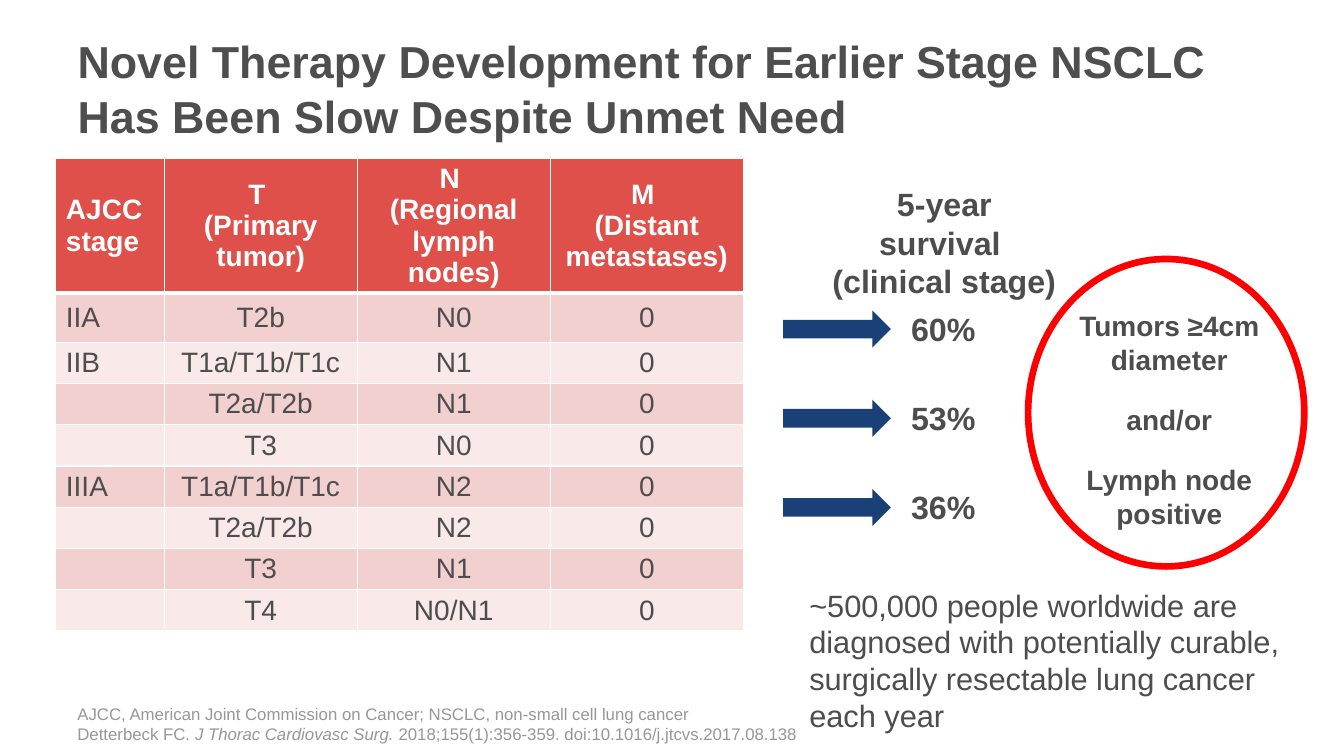
from lxml.etree import SubElement
from pptx import Presentation
from pptx.dml.color import RGBColor
from pptx.enum.shapes import MSO_SHAPE as Geo
from pptx.enum.text import MSO_ANCHOR as Anchor, PP_ALIGN as Align
from pptx.oxml.ns import qn
from pptx.util import Pt

GRAY, WHITE = "4D4D4D", "FFFFFF"
HEAD = ["AJCC stage", "T \n(Primary tumor)",
        "N \v(Regional lymph nodes)", "M \v(Distant metastases)"]
STAGES = [
    ("IIA", "T2b", "N0"),
    ("IIB", "T1a/T1b/T1c", "N1"),
    ("", "T2a/T2b", "N1"),
    ("", "T3", "N0"),
    ("IIIA", "T1a/T1b/T1c", "N2"),
    ("", "T2a/T2b", "N2"),
    ("", "T3", "N1"),
    ("", "T4", "N0/N1"),
]


def color(code):
    return RGBColor.from_string(code)


def style(para, size, code=GRAY, bold=False, align=Align.LEFT, pitch=None):
    para.alignment = align
    if pitch:
        para.line_spacing = Pt(pitch)
    font = para.font
    font.name, font.size, font.bold = "Arial", Pt(size), bold
    font.color.rgb = color(code)


def add_text(slide, box, lines, size, pitch, gap=0, **look):
    """Add a wrapped text box with one paragraph per line."""
    frame = slide.shapes.add_textbox(*map(Pt, box)).text_frame
    frame.word_wrap = True
    frame.text = "\n".join(lines)
    for i, para in enumerate(frame.paragraphs):
        style(para, size, pitch=pitch, **look)
        if i and gap:
            para.space_before = Pt(gap)
    return frame


def add_shape(slide, kind, box, fill=None, line=None, width=0):
    shape = slide.shapes.add_shape(kind, *map(Pt, box))
    shape.shadow.inherit = False
    if fill:
        shape.fill.solid()
        shape.fill.fore_color.rgb = color(fill)
    else:
        shape.fill.background()
    if line:
        shape.line.color.rgb = color(line)
        shape.line.width = Pt(width)
    else:
        shape.line.fill.background()


def set_edge(cell, side, width):
    props = cell._tc.get_or_add_tcPr()
    edge = SubElement(props, qn(f"a:ln{side}"), w=str(Pt(width)))
    fill = SubElement(edge, qn("a:solidFill"))
    SubElement(fill, qn("a:srgbClr"), val=WHITE)


def add_table(slide):
    rows = [HEAD] + [stage + ("0",) for stage in STAGES]
    high = [95.7, 35.3] + [29.5] * 7
    wide = [77.4] + [137.9] * 3
    table = slide.shapes.add_table(
        len(rows), len(wide), Pt(39.9), Pt(113.4),
        Pt(sum(wide)), Pt(sum(high))).table
    for col, width in zip(table.columns, wide):
        col.width = Pt(width)
    for r, row in enumerate(rows):
        table.rows[r].height = Pt(high[r])
        for c, text in enumerate(row):
            cell = table.cell(r, c)
            cell.text = text
            cell.vertical_anchor = Anchor.MIDDLE
            cell.margin_top = cell.margin_bottom = Pt(1.5)
            for para in cell.text_frame.paragraphs:
                style(para, 20, GRAY if r else WHITE, bold=not r,
                      align=Align.CENTER if c else Align.LEFT)
            # Borders come before the fill in the cell properties
            for side in "LRTB":
                heavy = (r, side) in ((0, "B"), (1, "T"))
                set_edge(cell, side, 3 if heavy else 1)
            cell.fill.solid()
            band = "F3D0D0" if r % 2 else "F9E9E9"
            cell.fill.fore_color.rgb = color(band if r else "DF504B")


def add_title(slide):
    title = slide.shapes.title
    title.left, title.top, title.width, title.height = map(
        Pt, (48.2, 15.8, 846, 93.6))
    frame = title.text_frame
    frame.text = ("Novel Therapy Development for Earlier Stage NSCLC "
                  "Has Been Slow Despite Unmet Need")
    frame.vertical_anchor = Anchor.MIDDLE
    style(frame.paragraphs[0], 32, "4D4E4D", bold=True, pitch=39.3)


def add_notes(slide):
    """Add the abbreviations and the citation at the foot."""
    frame = add_text(
        slide, (48.2, 500.4, 846, 34.6),
        ["AJCC, American Joint Commission on Cancer; "
         "NSCLC, non-small cell lung cancer", "Detterbeck FC. "],
        12, 14.3, code="979797")
    frame.vertical_anchor = Anchor.BOTTOM
    cite = frame.paragraphs[1]
    name = cite.add_run()
    name.text = "J Thorac Cardiovasc Surg. "
    name.font.italic = True
    cite.add_run().text = "2018;155(1):356-359. doi:10.1016/j.jtcvs.2017.08.138"


def main():
    deck = Presentation()
    deck.slide_width, deck.slide_height = Pt(960), Pt(540)
    slide = deck.slides.add_slide(deck.slide_layouts[5])
    add_title(slide)
    add_table(slide)

    # Survival by stage
    strong = dict(bold=True, align=Align.CENTER)
    frame = add_text(slide, (586.8, 128.2, 175.7, 63.4),
                     ["5-year survival ", "(clinical stage)"],
                     23, 27.5, **strong)
    frame.margin_left = frame.margin_right = Pt(7.4)
    for i, rate in enumerate(["60%", "53%", "36%"]):
        top = 221.8 + 63.7 * i
        add_shape(slide, Geo.RIGHT_ARROW, (559.4, top, 77, 26.6), "194178")
        add_text(slide, (638.8, top - 4.3, 70, 35.3), [rate],
                 23, 27.5, **strong)

    # Patient group in the ring
    add_text(slide, (761.8, 216.7, 146.9, 170),
             ["Tumors ≥4cm diameter", "and/or", "Lymph node positive"],
             20, 24.3, gap=18.6, **strong)
    add_shape(slide, Geo.OVAL, (734.4, 185, 197.3, 219.6),
              line="FF0000", width=4.75)

    # Takeaway and sources
    add_text(slide, (571, 415.4, 350.6, 113.8),
             ["~500,000 people worldwide are diagnosed with potentially "
              "curable, surgically resectable lung cancer each year"],
             22, 26.2)
    add_notes(slide)
    deck.save("out.pptx")


if __name__ == "__main__":
    main()
